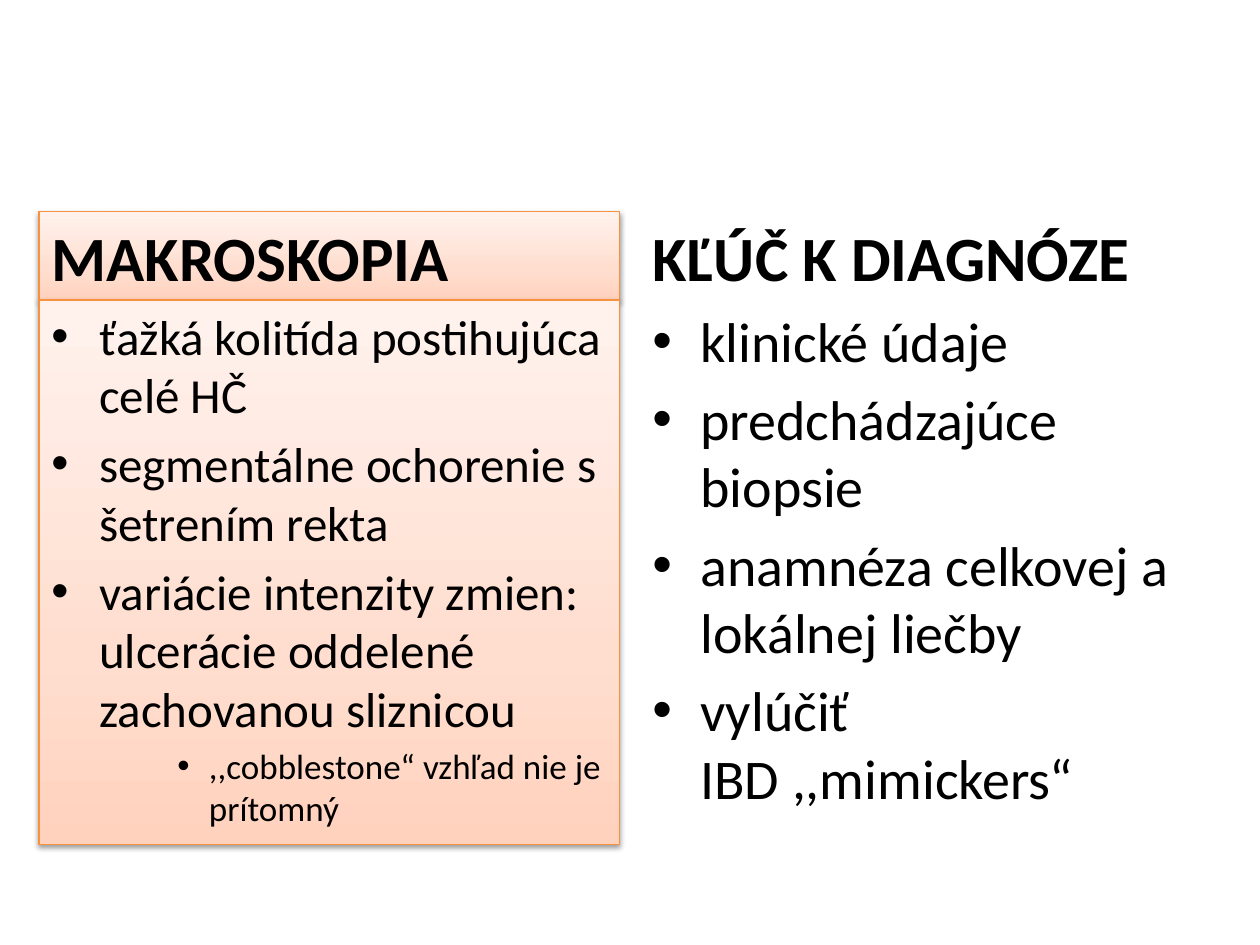
import pptx
import pptx.util
import pptx.dml.color
import pptx.enum.shapes
import pptx.enum.text
import pptx.oxml
import pptx.oxml.ns

WIDE, HIGH = 10, 7.5
FONT = "Calibri"
INK = {"text": "000000", "edge": "F69240", "low": "FFD2BD", "mid": "FFDED0", "top": "FFF2ED"}
STOPS = ((0, "low"), (35, "mid"), (100, "top"))
HEAD = 0.7 / 5.02
LEFT = ("MAKROSKOPIA", [
    ("ťažká kolitída postihujúca celé HČ", 28, 0),
    ("segmentálne ochorenie s šetrením rekta", 28, 0),
    ("variácie intenzity zmien: ulcerácie oddelené zachovanou sliznicou", 28, 0),
    (",,cobblestone“ vzhľad nie je prítomný", 20, 2),
])
RIGHT = ("KĽÚČ K DIAGNÓZE", [
    ("klinické údaje", 32, 0),
    ("predchádzajúce biopsie", 32, 0),
    ("anamnéza celkovej a lokálnej liečby", 32, 0),
    ("vylúčiť IBD ,,mimickers“", 32, 0),
])


def color(name):
    """Return the named colour."""
    return pptx.dml.color.RGBColor.from_string(INK[name])


def node(xml):
    """Parse a piece of DrawingML."""
    return pptx.oxml.parse_xml(xml.replace(" ", f" {pptx.oxml.ns.nsdecls('a')} ", 1))


def shade(shape):
    """Give a panel its gradient, edge and soft shadow."""
    shape.fill.gradient()
    grad = shape.fill._fill._gradFill
    stops = "".join(f'<a:gs pos="{pos * 1000}"><a:srgbClr val="{INK[name]}"/></a:gs>'
                    for pos, name in STOPS)
    fresh = node(f'<a:gradFill rotWithShape="1"><a:gsLst>{stops}</a:gsLst>'
                 '<a:lin ang="16200000" scaled="1"/></a:gradFill>')
    grad.getparent().replace(grad, fresh)
    shape.line.color.rgb = color("edge")
    shape.line.width = pptx.util.Pt(0.75)
    shape.shadow.inherit = False
    glow = node('<a:outerShdw blurRad="40000" dist="20000" dir="5400000" rotWithShape="0">'
                '<a:srgbClr val="000000"><a:alpha val="38000"/></a:srgbClr></a:outerShdw>')
    shape._element.spPr.find(pptx.oxml.ns.qn("a:effectLst")).append(glow)


def write(par, text, size, bold=False):
    """Fill a paragraph with one run."""
    par.alignment = pptx.enum.text.PP_ALIGN.LEFT
    par.space_before = pptx.util.Pt(size * 0.2)
    run = par.add_run()
    run.text = text
    run.font.name = FONT
    run.font.size = pptx.util.Pt(size)
    run.font.bold = bold
    run.font.color.rgb = color("text")


def dot(par, level):
    """Hang a bullet on a paragraph."""
    par.level = level
    left, hang = (1.25, 0.25) if level else (0.38, 0.38)
    props = par._p.get_or_add_pPr()
    props.set("marL", str(pptx.util.Inches(left)))
    props.set("indent", str(-pptx.util.Inches(hang)))
    props.append(node('<a:buFont typeface="Arial"/>'))
    props.append(node('<a:buChar char="•"/>'))


def panel(slide, box, tint, anchor):
    """Place an empty text panel, tinted or plain."""
    spot = [pptx.util.Inches(size) for size in box]
    if tint:
        shape = slide.shapes.add_shape(pptx.enum.shapes.MSO_SHAPE.RECTANGLE, *spot)
        shade(shape)
    else:
        shape = slide.shapes.add_textbox(*spot)
    frame = shape.text_frame
    frame.word_wrap = True
    frame.auto_size = pptx.enum.text.MSO_AUTO_SIZE.NONE
    frame.vertical_anchor = anchor
    return frame


def column(slide, box, content, tint):
    """Stack a heading over its bullet list."""
    left, top, wide, high = box
    title, items = content
    cut = high * HEAD
    anchor = pptx.enum.text.MSO_ANCHOR
    head = panel(slide, (left, top, wide, cut), tint, anchor.BOTTOM)
    write(head.paragraphs[0], title, 36, True)
    body = panel(slide, (left, top + cut, wide, high - cut), tint, anchor.TOP)
    for i, (text, size, level) in enumerate(items):
        par = body.add_paragraph() if i else body.paragraphs[0]
        write(par, text, size)
        dot(par, level)


def main():
    """Build and save the slide."""
    deck = pptx.Presentation()
    deck.slide_width = pptx.util.Inches(WIDE)
    deck.slide_height = pptx.util.Inches(HIGH)
    slide = deck.slides.add_slide(deck.slide_layouts[6])
    top, high = HIGH * 0.224, HIGH * 0.67
    column(slide, (WIDE * 0.031, top, WIDE * 0.461, high), LEFT, True)
    column(slide, (WIDE * 0.508, top, WIDE * 0.469, high), RIGHT, False)
    deck.save("out.pptx")


if __name__ == "__main__":
    main()
